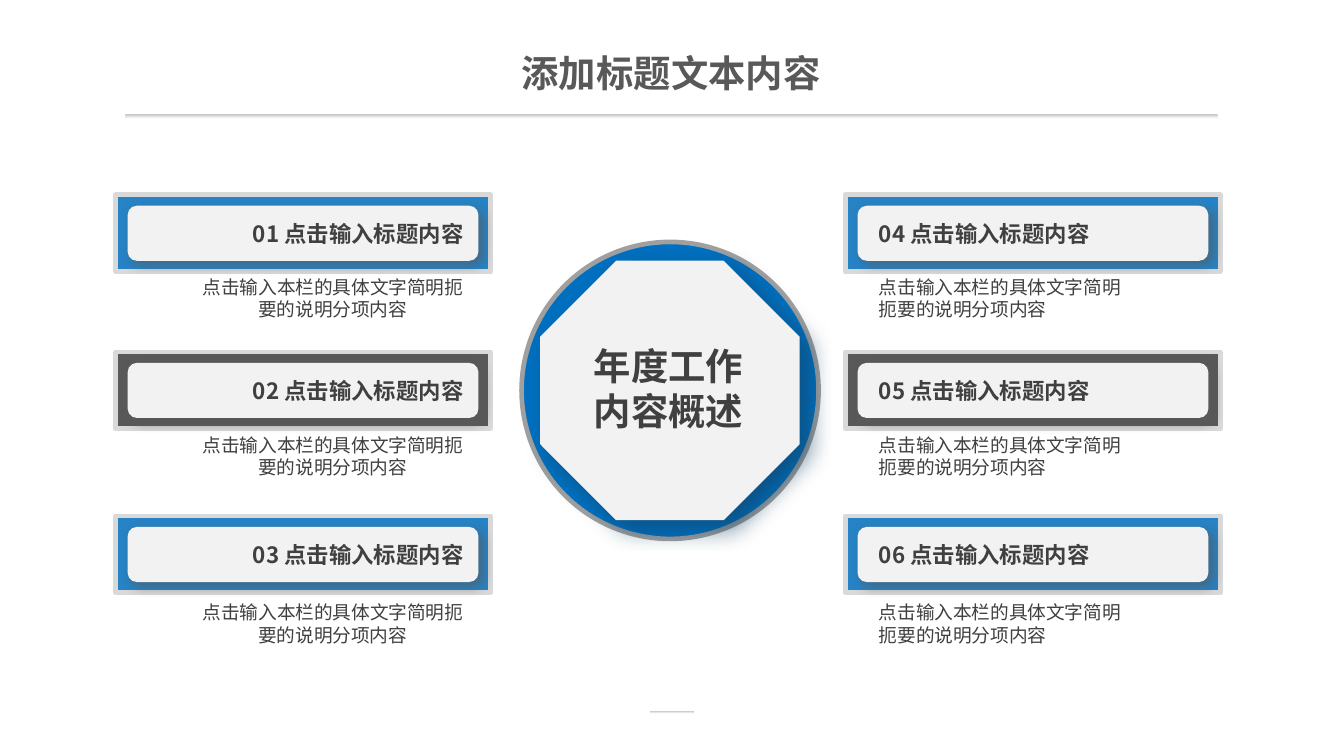
"""Build a slide with six numbered topics around a central octagon."""
from dataclasses import dataclass

from lxml import etree
from pptx import Presentation
from pptx.dml.color import RGBColor
from pptx.enum.shapes import MSO_SHAPE
from pptx.enum.text import MSO_ANCHOR, PP_ALIGN
from pptx.oxml.ns import qn
from pptx.util import Pt

ROUNDED, ELLIPSE, OCTAGON = MSO_SHAPE.ROUNDED_RECTANGLE, MSO_SHAPE.OVAL, MSO_SHAPE.OCTAGON
LEFT, CENTER, RIGHT = PP_ALIGN.LEFT, PP_ALIGN.CENTER, PP_ALIGN.RIGHT
TOP, MIDDLE = MSO_ANCHOR.TOP, MSO_ANCHOR.MIDDLE

WHITE = RGBColor(0xFF, 0xFF, 0xFF)
PANEL = RGBColor(0xF2, 0xF2, 0xF2)
FRAME = RGBColor(0xD9, 0xD9, 0xD9)
RULE = RGBColor(0xBF, 0xBF, 0xBF)
RING = RGBColor(0xA0, 0xA0, 0xA0)
GRAY = RGBColor(0x59, 0x59, 0x59)
INK = RGBColor(0x40, 0x40, 0x40)
BLUE = RGBColor(0x26, 0x83, 0xC6)
DEEP_BLUE = RGBColor(0x00, 0x70, 0xC0)
NAVY = RGBColor(0x13, 0x41, 0x63)

CJK_FONT = "Noto Sans CJK SC"
HEADING = "点击输入标题内容"
DETAIL = "点击输入本栏的具体文字简明扼要的说明分项内容"


@dataclass(frozen=True)
class Box:
    left: float
    top: float
    width: float
    height: float

    def lengths(self) -> tuple:
        return Pt(self.left), Pt(self.top), Pt(self.width), Pt(self.height)


@dataclass(frozen=True)
class Shadow:
    color: RGBColor
    blur: float
    distance: float


@dataclass(frozen=True)
class Column:
    bar_left: float
    heading_left: float
    detail_left: float
    detail_width: float
    heading_align: PP_ALIGN
    detail_align: PP_ALIGN


@dataclass(frozen=True)
class Row:
    top: float
    detail_top: float
    color: RGBColor


COLUMNS = (
    Column(61.9, 94.3, 108, 140.5, RIGHT, CENTER),
    Column(452.9, 470.9, 470.9, 132.5, LEFT, LEFT),
)
ROWS = (Row(104.4, 154.8, BLUE), Row(188.6, 239.2, GRAY), Row(276.5, 329, BLUE))
PANEL_SHADOW = Shadow(GRAY, 6, 3)
OCTAGON_SHADOW = Shadow(NAVY, 13, 7)


def add_panel(slide, kind: MSO_SHAPE, box: Box, color: RGBColor, *,
              outline: RGBColor | None = None, shadow: Shadow | None = None,
              rounding: float | None = None, fade: RGBColor | None = None):
    """Add a filled shape with an optional outline, shadow and fade."""
    panel = slide.shapes.add_shape(kind, *box.lengths())
    if rounding is not None:
        panel.adjustments[0] = rounding
    if fade is None:
        panel.fill.solid()
        panel.fill.fore_color.rgb = color
    else:
        panel.fill.gradient()
        panel.fill.gradient_angle = 270
        for stop, shade in zip(panel.fill.gradient_stops, (color, fade)):
            stop.color.rgb = shade
    if outline is None:
        panel.line.fill.background()
    else:
        panel.line.color.rgb = outline
        panel.line.width = Pt(2.5)
    panel.shadow.inherit = False
    if shadow is not None:
        effects = panel.element.spPr.find(qn("a:effectLst"))
        outer = etree.SubElement(
            effects, qn("a:outerShdw"), blurRad=str(Pt(shadow.blur)),
            dist=str(Pt(shadow.distance)), dir="2700000", algn="tl", rotWithShape="0")
        tint = etree.SubElement(outer, qn("a:srgbClr"), val=str(shadow.color))
        etree.SubElement(tint, qn("a:alpha"), val="64000")
    return panel


def add_text(slide, text: str, box: Box, *, size: float, color: RGBColor = INK,
             font: str = CJK_FONT, bold: bool = False, align: PP_ALIGN = LEFT,
             anchor: MSO_ANCHOR = TOP, side_inset: float = 0, end_inset: float = 3.6):
    """Add a text box with one paragraph per line of text."""
    frame = slide.shapes.add_textbox(*box.lengths()).text_frame
    frame.word_wrap = True
    frame.vertical_anchor = anchor
    frame.margin_left = frame.margin_right = Pt(side_inset)
    frame.margin_top = frame.margin_bottom = Pt(end_inset)
    frame.text = text
    for paragraph in frame.paragraphs:
        paragraph.alignment = align
        paragraph.line_spacing = Pt(size * 1.2)
        for run in paragraph.runs:
            run.font.name = font
            run.font.size = Pt(size)
            run.font.bold = bold
            run.font.color.rgb = color
            etree.SubElement(run.font._element, qn("a:ea"), typeface=CJK_FONT)


def add_topic(slide, number: int, column: Column, row: Row) -> None:
    """Add a framed bar with its numbered heading and its detail text."""
    add_panel(slide, ROUNDED, Box(column.bar_left, row.top, 200.9, 41), row.color,
              outline=FRAME, rounding=0)
    add_panel(slide, ROUNDED, Box(column.bar_left + 6.5, row.top + 5.8, 187.9, 29.5),
              PANEL, shadow=PANEL_SHADOW)
    add_text(slide, f"{number:02d} {HEADING}",
             Box(column.heading_left, row.top + 10, 154.1, 22.3),
             size=12, bold=True, align=column.heading_align)
    add_text(slide, DETAIL,
             Box(column.detail_left, row.detail_top, column.detail_width, 10),
             size=10, align=column.detail_align, anchor=MIDDLE)


def main() -> None:
    """Build and save the slide."""
    deck = Presentation()
    deck.slide_width, deck.slide_height = Pt(720), Pt(405)
    slide = deck.slides.add_slide(deck.slide_layouts[6])

    for rule in (Box(67, 61, 585.4, 2.6), Box(348.3, 380.8, 23.3, 1.5)):
        add_panel(slide, ROUNDED, rule, RULE, fade=WHITE, rounding=0.5)
    add_text(slide, "添加标题文本内容", Box(221, 24, 277.2, 29.5), size=20, color=GRAY,
             font="Arial", bold=True, align=CENTER, side_inset=5, end_inset=2.9)

    for column_index, column in enumerate(COLUMNS):
        for row_index, row in enumerate(ROWS):
            add_topic(slide, column_index * len(ROWS) + row_index + 1, column, row)

    add_panel(slide, ELLIPSE, Box(279.4, 129.6, 159.1, 159.1), DEEP_BLUE, outline=RING)
    add_panel(slide, OCTAGON, Box(289.4, 139.7, 139, 139), PANEL, shadow=OCTAGON_SHADOW)
    add_text(slide, "年度工作\n内容概述", Box(298.8, 180.5, 118.8, 55.4),
             size=20, bold=True, align=CENTER, side_inset=7.2)

    deck.save("out.pptx")


if __name__ == "__main__":
    main()
